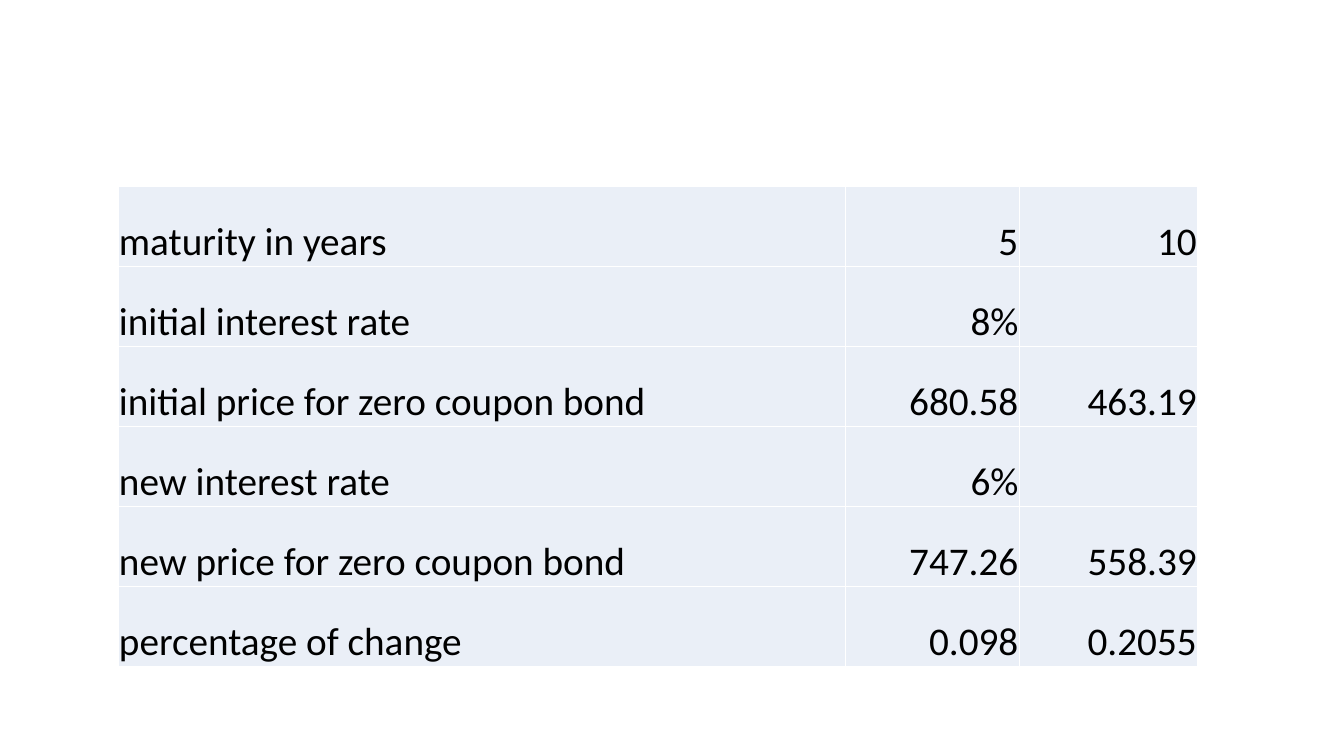
import lxml.etree
import pptx
import pptx.dml.color
import pptx.enum.text
import pptx.oxml.ns
import pptx.util

PX = 9144
CELL_FILL = "EAEFF7"
BORDER = "FFFFFF"
TEXT = "000000"
COLUMNS = [722, 172, 177]
ROWS = [
    ("maturity in years", "5", "10"),
    ("initial interest rate", "8%", ""),
    ("initial price for zero coupon bond", "680.58", "463.19"),
    ("new interest rate", "6%", ""),
    ("new price for zero coupon bond", "747.26", "558.39"),
    ("percentage of change", "0.098", "0.2055"),
]
CELL_FORMAT = {
    "margin_left": PX,
    "margin_right": PX,
    "margin_top": PX,
    "margin_bottom": 0,
    "vertical_anchor": pptx.enum.text.MSO_ANCHOR.BOTTOM,
}
FONT_FORMAT = {"name": "Calibri", "size": pptx.util.Pt(28), "bold": False}


def px(n):
    """Turn px into EMU."""
    return pptx.util.Emu(n * PX)


def color(value):
    """Turn a hex string into a colour."""
    return pptx.dml.color.RGBColor.from_string(value)


def apply(obj, values):
    """Set attributes from a dict of format values."""
    for name, value in values.items():
        setattr(obj, name, value)


def add_borders(cell):
    """Draw a thin line on each side of a cell."""
    qn = pptx.oxml.ns.qn
    tcPr = cell._tc.get_or_add_tcPr()
    for side in ("a:lnL", "a:lnR", "a:lnT", "a:lnB"):
        ln = lxml.etree.SubElement(tcPr, qn(side), w=str(pptx.util.Pt(1)))
        fill = lxml.etree.SubElement(ln, qn("a:solidFill"))
        lxml.etree.SubElement(fill, qn("a:srgbClr"), val=BORDER)


def fill_cell(cell, text, align):
    """Format one cell and write its text."""
    add_borders(cell)
    cell.fill.solid()
    cell.fill.fore_color.rgb = color(CELL_FILL)
    apply(cell, CELL_FORMAT)
    p = cell.text_frame.paragraphs[0]
    p.alignment = align
    if text:
        r = p.add_run()
        r.text = text
        apply(r.font, FONT_FORMAT)
        r.font.color.rgb = color(TEXT)


def add_bond_table(s, x, y, w, h):
    """Place the bond price table in the given box."""
    table = s.shapes.add_table(
        len(ROWS), len(COLUMNS), px(x), px(y), px(w), px(h)
    ).table
    apply(table, {"first_row": False, "horz_banding": False})
    for column, share in zip(table.columns, COLUMNS):
        column.width = px(round(w * share / sum(COLUMNS)))
    aligns = pptx.enum.text.PP_ALIGN
    for i, row in enumerate(ROWS):
        for j, text in enumerate(row):
            fill_cell(table.cell(i, j), text, aligns.RIGHT if j else aligns.LEFT)


def main():
    """Build the slide and save it."""
    prs = pptx.Presentation()
    apply(prs, {"slide_width": px(1333), "slide_height": px(750)})
    s = prs.slides.add_slide(prs.slide_layouts[6])
    add_bond_table(s, 117, 185, 1071, 476)
    prs.save("out.pptx")


if __name__ == "__main__":
    main()
